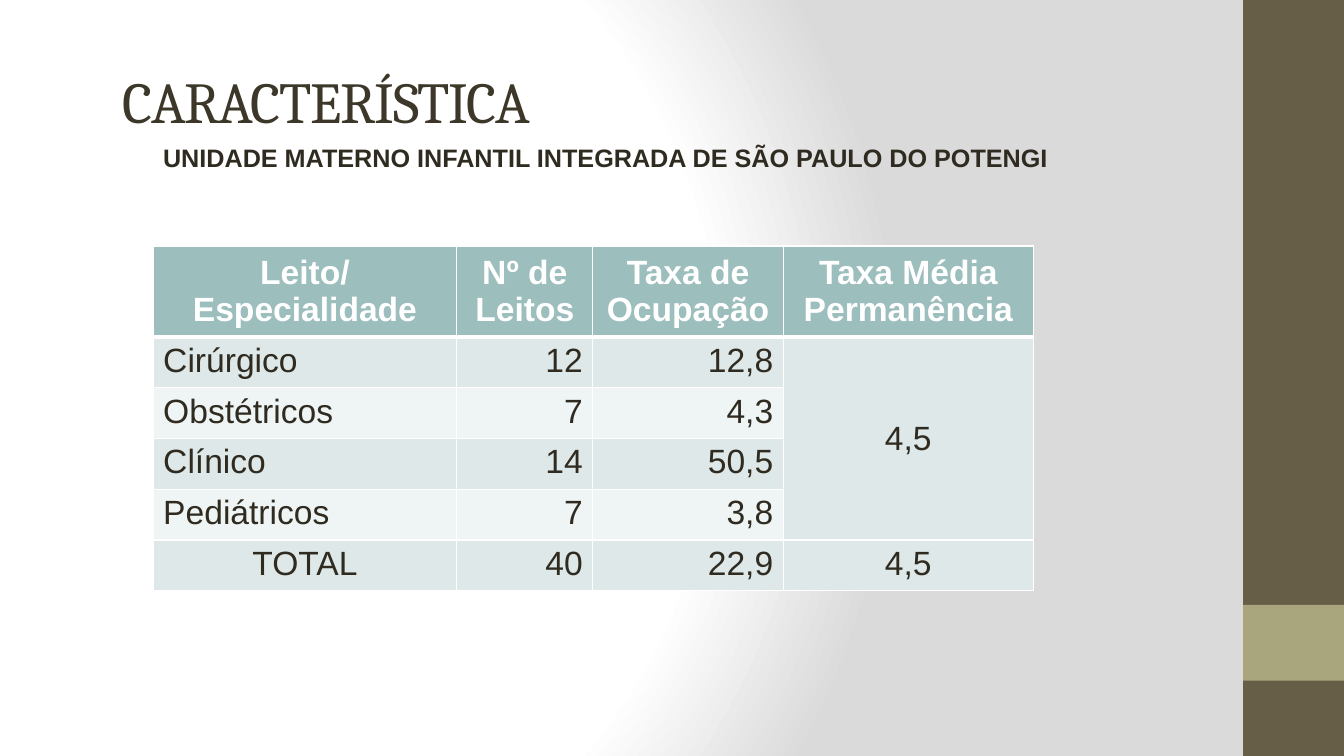
from lxml import etree
from pptx import Presentation
from pptx.dml.color import RGBColor
from pptx.enum.shapes import MSO_SHAPE as Shape
from pptx.enum.text import MSO_ANCHOR as Anchor, PP_ALIGN as Align
from pptx.oxml import parse_xml
from pptx.oxml.ns import nsdecls, qn
from pptx.util import Cm, Pt

WIDTH, HEIGHT = 33.87, 19.05
INK, WHITE = "2F2B20", "FFFFFF"
HEAD, ODD, EVEN = "9CBEBD", "DEE8E8", "EFF4F4"

COLS = [7.65, 3.43, 4.8, 6.3]
HEAD_ROW, BODY_ROW = 2.27, 1.28
ROWS = [
    ["Leito/ Especialidade", "Nº de\nLeitos", "Taxa de Ocupação", "Taxa Média Permanência"],
    ["Cirúrgico", "12", "12,8", "4,5"],
    ["Obstétricos", "7", "4,3", ""],
    ["Clínico", "14", "50,5", ""],
    ["Pediátricos", "7", "3,8", ""],
    ["TOTAL", "40", "22,9", "4,5"],
]
LAST = len(ROWS) - 1


def rgb(code):
    return RGBColor.from_string(code)


def add_run(para, text, size, color, name="Arial", bold=False):
    run = para.add_run()
    run.text = text
    font = run.font
    font.size, font.name, font.bold = Pt(size), name, bold
    font.color.rgb = rgb(color)
    return run


def paint_back(slide):
    """Fill the background with a radial gradient."""
    stops = "".join(
        f'<a:gs pos="{pos * 1000}"><a:srgbClr val="{color}"/></a:gs>'
        for pos, color in [(0, WHITE), (75, WHITE), (100, "DADADA")])
    slide.element.cSld.insert(0, parse_xml(
        f'<p:bg {nsdecls("p", "a")}><p:bgPr><a:gradFill rotWithShape="1">'
        f'<a:gsLst>{stops}</a:gsLst><a:path path="circle">'
        '<a:fillToRect l="20000" t="50000" r="100000" b="50000"/></a:path>'
        '</a:gradFill><a:effectLst/></p:bgPr></p:bg>'))


def add_band(slide, left, width):
    """Draw the full-height side band with its lighter block."""
    for top, height, color in [(0, HEIGHT, "675E47"), (15.24, 1.91, "A9A57C")]:
        rect = slide.shapes.add_shape(
            Shape.RECTANGLE, Cm(left), Cm(top), Cm(width), Cm(height))
        rect.shadow.inherit = False
        rect.fill.solid()
        rect.fill.fore_color.rgb = rgb(color)
        rect.line.fill.background()


def add_box(slide, left, top, width, height):
    """Add a wrapping text box and return its frame."""
    box = slide.shapes.add_textbox(Cm(left), Cm(top), Cm(width), Cm(height))
    box.text_frame.word_wrap = True
    return box.text_frame


def add_title(slide, left, top, width, height):
    frame = add_box(slide, left, top, width, height)
    frame.vertical_anchor = Anchor.MIDDLE
    run = add_run(frame.paragraphs[0], "CARACTERÍSTICA", 41.4, "3C3729", "Cambria")
    run.font._element.set("spc", "-100")


def add_unit(slide, left, top, width, height):
    """Add the indented name of the unit."""
    para = add_box(slide, left, top, width, height).paragraphs[0]
    para._p.get_or_add_pPr().set("indent", str(Cm(1.22)))
    add_run(para, "UNIDADE MATERNO INFANTIL INTEGRADA DE SÃO PAULO DO POTENGI",
            18, INK, bold=True)


def add_edge(cell, side, width):
    line = etree.SubElement(cell._tc.get_or_add_tcPr(), qn(f"a:ln{side}"), w=str(Pt(width)))
    fill = etree.SubElement(line, qn("a:solidFill"))
    etree.SubElement(fill, qn("a:srgbClr"), val=WHITE)


def get_align(row, col):
    if row == 0 or col == 3 or (row == LAST and col == 0):
        return Align.CENTER
    return Align.LEFT if col == 0 else Align.RIGHT


def fill_cell(cell, row, col, text):
    head = row == 0
    for side in "LRTB":
        thick = (head and side == "B") or (row == 1 and side == "T")
        add_edge(cell, side, 3 if thick else 1)
    cell.fill.solid()
    body = ODD if row % 2 or col == 3 else EVEN
    cell.fill.fore_color.rgb = rgb(HEAD if head else body)
    middle = head or cell.is_merge_origin
    cell.vertical_anchor = Anchor.MIDDLE if middle else Anchor.TOP
    if not text:
        return
    frame = cell.text_frame
    for i, part in enumerate(text.split("\n")):
        para = frame.add_paragraph() if i else frame.paragraphs[0]
        para.alignment = get_align(row, col)
        add_run(para, part, 24, WHITE if head else INK, bold=head)


def add_beds(slide, left, top):
    """Add the table of beds by specialty."""
    height = HEAD_ROW + LAST * BODY_ROW
    table = slide.shapes.add_table(
        len(ROWS), len(COLS), Cm(left), Cm(top), Cm(sum(COLS)), Cm(height)).table
    for col, width in zip(table.columns, COLS):
        col.width = Cm(width)
    for i, row in enumerate(table.rows):
        row.height = Cm(BODY_ROW if i else HEAD_ROW)
    table.cell(1, 3).merge(table.cell(LAST - 1, 3))
    for i, row in enumerate(ROWS):
        for j, text in enumerate(row):
            fill_cell(table.cell(i, j), i, j, text)


def main():
    deck = Presentation()
    deck.slide_width, deck.slide_height = Cm(WIDTH), Cm(HEIGHT)
    slide = deck.slides.add_slide(deck.slide_layouts[6])
    paint_back(slide)
    add_band(slide, WIDTH - 2.54, 2.54)
    add_title(slide, 2.84, 1.63, 27, 1.78)
    add_unit(slide, 2.64, 3.45, 24.79, 1.02)
    add_beds(slide, 3.86, 6.2)
    deck.save("out.pptx")


if __name__ == "__main__":
    main()
